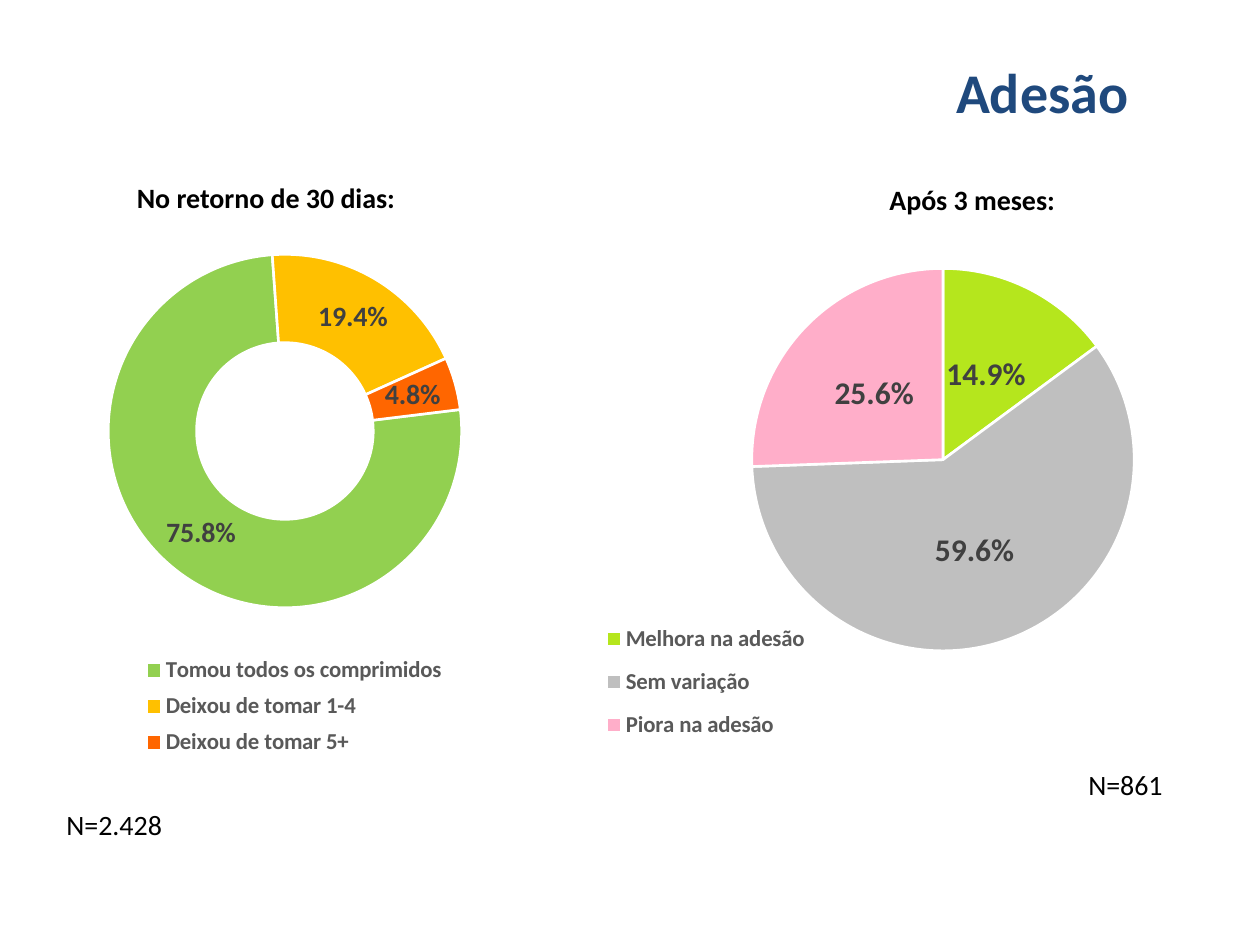
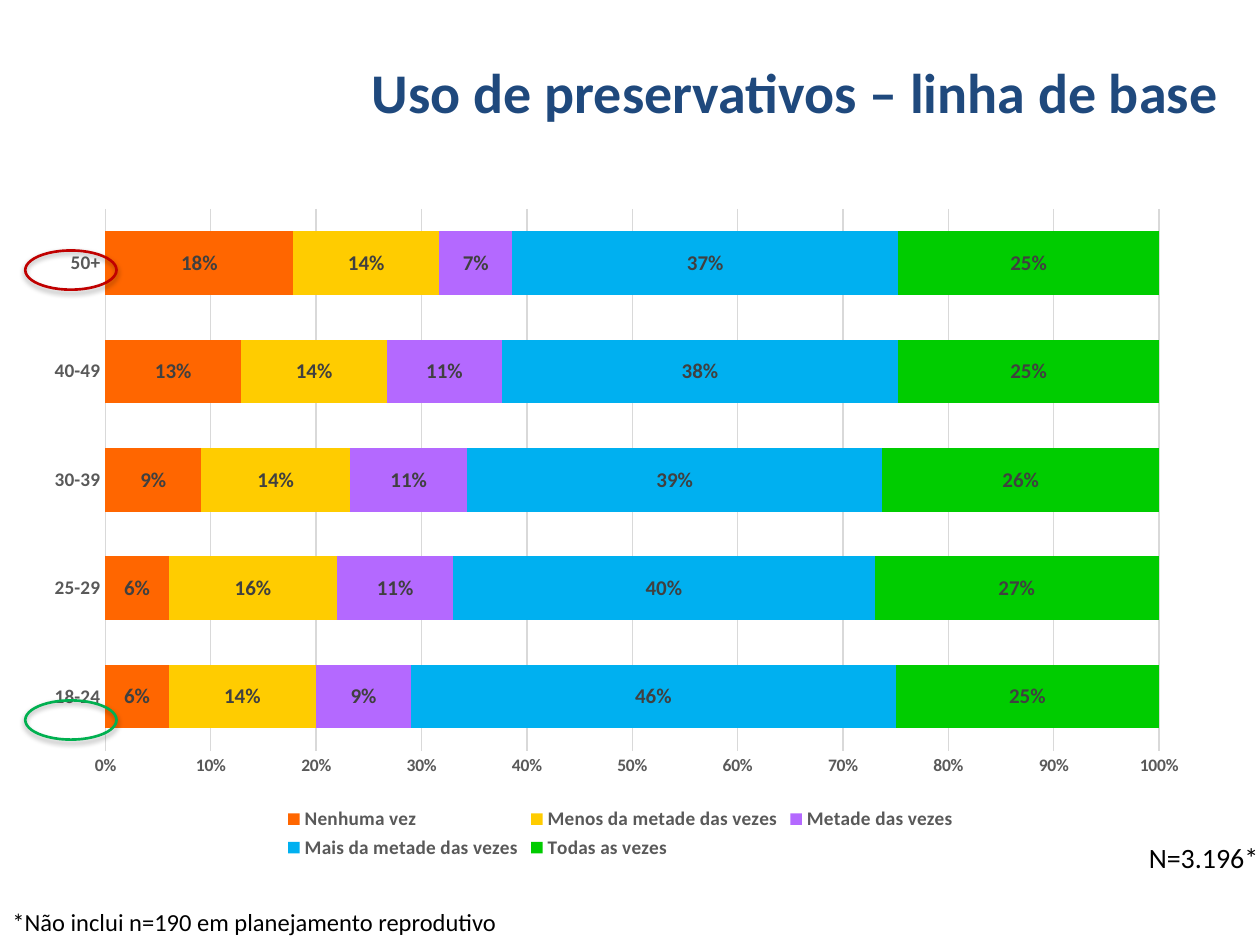
from lxml import etree
from pptx import Presentation
from pptx import util as u
from pptx.chart.data import CategoryChartData
from pptx.dml.color import RGBColor
from pptx.enum import chart as ch
from pptx.enum import shapes, text
from pptx.oxml import parse_xml
from pptx.oxml.ns import nsdecls, qn

FONT = "Calibri"
NAVY = RGBColor(0x1F, 0x49, 0x7D)
BLACK = RGBColor(0, 0, 0)
WHITE = RGBColor(0xFF, 0xFF, 0xFF)
LABEL_GRAY = RGBColor(0x40, 0x40, 0x40)
AXIS_GRAY = RGBColor(0x59, 0x59, 0x59)
GRID_GRAY = RGBColor(0xD9, 0xD9, 0xD9)
SILVER = RGBColor(0xBF, 0xBF, 0xBF)
LIME = RGBColor(0xB5, 0xE6, 0x1D)
PINK = RGBColor(0xFF, 0xAE, 0xC9)
SOFT_GREEN = RGBColor(0x92, 0xD0, 0x50)
AMBER = RGBColor(0xFF, 0xC0, 0x00)
ORANGE = RGBColor(0xFF, 0x66, 0x00)
YELLOW = RGBColor(0xFF, 0xCC, 0x00)
PURPLE = RGBColor(0xB4, 0x69, 0xFF)
SKY = RGBColor(0x00, 0xB0, 0xF0)
GREEN = RGBColor(0x00, 0xCC, 0x00)
DARK_RED = RGBColor(0xC0, 0x00, 0x00)
DARK_GREEN = RGBColor(0x00, 0xB0, 0x50)


def cm(*lengths):
    return [u.Cm(length) for length in lengths]


def style_font(font, size, color, bold=False):
    font.name = FONT
    font.size = u.Pt(size)
    font.color.rgb = color
    font.bold = bold


def write_text(frame, words, size=16, color=BLACK, bold=False, align=None):
    frame.word_wrap = True
    para = frame.paragraphs[0]
    para.alignment = align
    span = para.add_run()
    span.text = words
    style_font(span.font, size, color, bold)


def add_text(page, words, place, **style):
    box = page.shapes.add_textbox(*cm(*place))
    write_text(box.text_frame, words, **style)


def add_titled_page(deck, words, left):
    page = deck.slides.add_slide(deck.slide_layouts[5])
    title = page.shapes.title
    title.left, title.top, title.width, title.height = cm(left, 0.94, 25.4, 1.8)
    frame = title.text_frame
    frame.auto_size = text.MSO_AUTO_SIZE.NONE
    frame.vertical_anchor = text.MSO_ANCHOR.MIDDLE
    frame.margin_right = u.Cm(0.54)
    write_text(frame, words, size=32, color=NAVY, bold=True,
               align=text.PP_ALIGN.RIGHT)
    return page


def set_layout(parent, index, fractions, inner=False):
    """Fix a plot area or legend at x, y, w, h fractions of its chart."""
    for old in parent.findall(qn("c:layout")):
        parent.remove(old)
    layout = parse_xml(f'<c:layout {nsdecls("c")}><c:manualLayout/></c:layout>')
    settings = [("layoutTarget", "inner")] if inner else []
    settings += [("xMode", "edge"), ("yMode", "edge"), *zip("xywh", fractions)]
    for name, value in settings:
        etree.SubElement(layout[0], qn(f"c:{name}")).set("val", str(value))
    parent.insert(index, layout)


def add_chart(page, kind, place, categories, series, number_format, plot_area,
              label_size, legend_size, legend_area=None):
    data = CategoryChartData(number_format=number_format)
    data.categories = categories
    for name, values in series:
        data.add_series(name, values)
    chart = page.shapes.add_chart(kind, *cm(*place), data).chart
    style_font(chart.font, 10, BLACK)
    chart.has_title = False
    set_layout(chart.plots[0]._element.getparent(), 0, plot_area, inner=True)

    chart.has_legend = True
    legend = chart.legend
    legend.position = ch.XL_LEGEND_POSITION.BOTTOM
    legend.include_in_layout = False
    style_font(legend.font, legend_size, AXIS_GRAY, True)
    if legend_area:
        set_layout(legend._element, 1, legend_area)

    plot = chart.plots[0]
    plot.has_data_labels = True
    labels = plot.data_labels
    labels.show_value = True
    labels.show_percentage = False
    labels.number_format = number_format
    labels.number_format_is_linked = False
    style_font(labels.font, label_size, LABEL_GRAY, True)
    if kind != ch.XL_CHART_TYPE.DOUGHNUT:
        labels.position = ch.XL_LABEL_POSITION.CENTER
    return chart


def add_round_chart(page, kind, place, slices, **options):
    """Add a pie or doughnut from (category, value, colour) slices."""
    categories, values, colors = zip(*slices)
    chart = add_chart(page, kind, place, categories, [("Series 1", values)],
                      "0.0%", legend_size=13, **options)
    plot = chart.plots[0]
    plot.vary_by_categories = True
    for index, color in enumerate(colors):
        piece = plot.series[0].points[index].format
        piece.fill.solid()
        piece.fill.fore_color.rgb = color
        piece.line.color.rgb = WHITE
        piece.line.width = u.Pt(1.5)
    return chart


def add_usage_chart(page, place, ages, answers):
    chart = add_chart(page, ch.XL_CHART_TYPE.BAR_STACKED_100, place, ages,
                      [answer[:2] for answer in answers], "0%",
                      plot_area=(0.06, 0.02, 0.9, 0.81),
                      label_size=12, legend_size=11)
    plot = chart.plots[0]
    plot.gap_width = 70
    plot.overlap = 100
    plot.vary_by_categories = False
    for bars, (_, _, color) in zip(plot.series, answers):
        bars.format.fill.solid()
        bars.format.fill.fore_color.rgb = color
    for axis, size in ((chart.category_axis, 11), (chart.value_axis, 10)):
        axis.major_tick_mark = axis.minor_tick_mark = ch.XL_TICK_MARK.NONE
        style_font(axis.tick_labels.font, size, AXIS_GRAY, True)
    value_axis = chart.value_axis
    value_axis.tick_labels.number_format = "0%"
    value_axis.tick_labels.number_format_is_linked = False
    value_axis.format.line.fill.background()
    value_axis.has_major_gridlines = True
    for line in (chart.category_axis.format.line,
                 value_axis.major_gridlines.format.line):
        line.color.rgb = GRID_GRAY
        line.width = u.Pt(0.75)


def add_age_ring(page, place, color):
    ring = page.shapes.add_shape(shapes.MSO_SHAPE.OVAL, *cm(*place))
    ring.fill.background()
    ring.line.color.rgb = color
    ring.line.width = u.Pt(1.5)
    ring.shadow.inherit = False
    effects = ring._element.spPr.find(qn("a:effectLst"))
    effects.append(parse_xml(
        f'<a:outerShdw {nsdecls("a")} blurRad="{u.Pt(3.1)}" dist="{u.Pt(1.8)}" '
        'dir="5400000" rotWithShape="0"><a:srgbClr val="000000">'
        '<a:alpha val="35000"/></a:srgbClr></a:outerShdw>'))


def build_adherence(deck):
    page = add_titled_page(deck, "Adesão", -2.11)
    add_text(page, "N=2.428", (1.09, 16.15, 3.61, 1.12))
    add_round_chart(
        page, ch.XL_CHART_TYPE.PIE, (11.3, 4.34, 15.42, 11.2),
        [("Melhora na adesão", 0.149, LIME),
         ("Sem variação", 0.596, SILVER),
         ("Piora na adesão", 0.256, PINK)],
        plot_area=(0.25, 0.03, 0.5, 0.82), label_size=18,
        legend_area=(0.04, 0.71, 0.3, 0.26))
    doughnut = add_round_chart(
        page, ch.XL_CHART_TYPE.DOUGHNUT, (-3.63, 3.2, 18.75, 12.34),
        [("Tomou todos os comprimidos", 0.758, SOFT_GREEN),
         ("Deixou de tomar 1-4", 0.194, AMBER),
         ("Deixou de tomar 5+", 0.048, ORANGE)],
        plot_area=(0.31, 0.1, 0.38, 0.69), label_size=16,
        legend_area=(0.33, 0.8, 0.36, 0.19))
    ring = doughnut.plots[0]._element
    ring.find(qn("c:firstSliceAng")).set("val", "83")
    ring.find(qn("c:holeSize")).set("val", "47")
    add_text(page, "No retorno de 30 dias:", (2.51, 3.51, 5.87, 0.99), bold=True)
    add_text(page, "Após 3 meses:", (17.68, 3.56, 4.9, 0.94), bold=True)
    add_text(page, "N=861", (21.69, 15.34, 3.2, 1.6))


def build_condom_use(deck):
    page = add_titled_page(deck, "Uso de preservativos – linha de base", -0.3)
    add_usage_chart(
        page, (0.71, 3.94, 23.6, 13.49),
        ("18-24", "25-29", "30-39", "40-49", "50+"),
        [("Nenhuma vez", (0.06, 0.06, 0.09, 0.13, 0.18), ORANGE),
         ("Menos da metade das vezes", (0.14, 0.16, 0.14, 0.14, 0.14), YELLOW),
         ("Metade das vezes", (0.09, 0.11, 0.11, 0.11, 0.07), PURPLE),
         ("Mais da metade das vezes", (0.46, 0.4, 0.39, 0.38, 0.37), SKY),
         ("Todas as vezes", (0.25, 0.27, 0.26, 0.25, 0.25), GREEN)])
    for top, color in ((5.05, DARK_RED), (14.12, DARK_GREEN)):
        add_age_ring(page, (0.51, top, 1.84, 0.79), color)
    add_text(page, "N=3.196*", (22.91, 16.81, 3, 0.94))
    add_text(page, "*Não inclui n=190 em planejamento reprodutivo",
             (0, 18.16, 10.8, 0.86), size=14)


def main():
    deck = Presentation()
    deck.slide_width, deck.slide_height = cm(25.4, 19.05)
    build_adherence(deck)
    build_condom_use(deck)
    deck.save("out.pptx")


if __name__ == "__main__":
    main()
